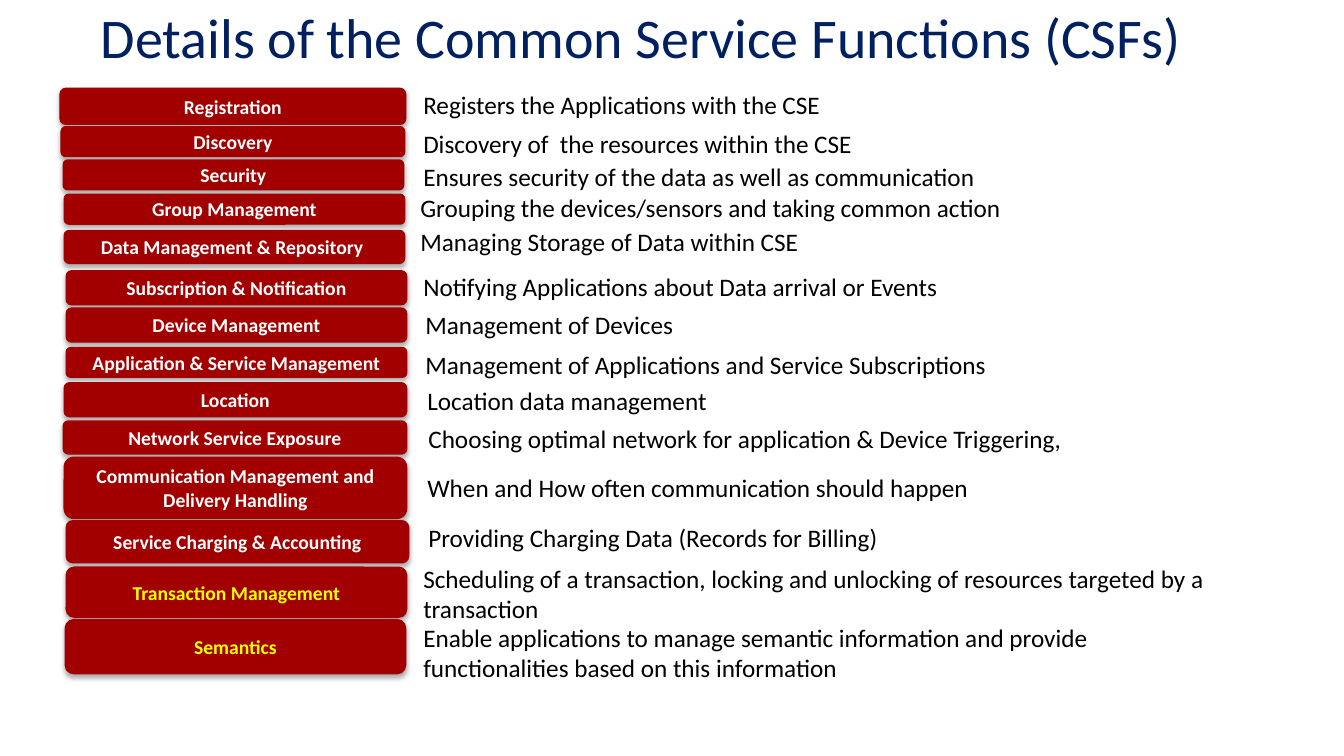
"""Build the slide that lists the Common Service Functions and their purpose."""
from dataclasses import dataclass

from lxml import etree
from pptx import Presentation
from pptx import util as u
from pptx.dml.color import RGBColor
from pptx.enum import shapes, text
from pptx.oxml.ns import qn

CELL = 0.1
FONT = "Calibri"
NAVY, RED, WHITE, YELLOW, BLACK = "002060", "A20000", "FFFFFF", "FFFF00", "000000"


@dataclass
class Function:
    name: str
    col: float
    row: float
    cols: float
    rows: float
    note: str
    note_col: float
    note_row: float
    note_cols: float
    note_rows: float = 4
    color: str = WHITE


FUNCTIONS = [
    Function("Registration", 5.9, 8.7, 34.4, 3.7,
             "Registers the Applications with the CSE", 41, 8.4, 79.7),
    Function("Discovery", 6, 12.5, 34.2, 3.1,
             "Discovery of  the resources within the CSE", 41, 12.2, 58.3),
    Function("Security", 6.2, 15.8, 33.9, 3.1,
             "Ensures security of the data as well as communication", 41, 15.5, 60.5),
    Function("Group Management", 6.3, 19.2, 33.9, 3.1,
             "Grouping the devices/sensors and taking common action", 40.7, 18.6, 70.5),
    Function("Data Management & Repository ", 6.3, 22.8, 33.9, 3.4,
             "Managing Storage of Data within CSE", 40.7, 22, 60.5),
    Function("Subscription & Notification", 6.5, 26.8, 33.9, 3.5,
             "Notifying Applications about Data arrival or Events", 41, 26.4, 60.5),
    Function("Device Management", 6.5, 30.5, 33.9, 3.5,
             "Management of Devices", 41.2, 30.2, 60.5),
    Function("Application & Service Management", 6.5, 34.4, 33.9, 3.1,
             "Management of Applications and Service Subscriptions", 41.2, 34.2, 69.9),
    Function("Location", 6.3, 37.9, 34.1, 3.5,
             "Location data management", 41.4, 37.7, 60.5),
    Function("Network Service Exposure", 6.2, 41.7, 34.2, 3.4,
             "Choosing optimal network for application & Device Triggering,",
             41.5, 41.5, 69.9),
    Function("Communication Management and Delivery Handling", 6.3, 45.3, 34.1, 6.2,
             "When and How often communication should happen", 41.4, 46.4, 60.5),
    Function("Service Charging & Accounting", 6.5, 51.6, 34.1, 4.3,
             "Providing Charging Data (Records for Billing)", 41.5, 51.3, 69.9),
    Function("Transaction Management", 6.5, 56.2, 33.9, 5.1,
             "Scheduling of a transaction, locking and unlocking of resources "
             "targeted by a transaction", 41, 55.4, 82.3, 7.1, YELLOW),
    Function("Semantics", 6.4, 61.4, 33.9, 5.5,
             "Enable applications to manage semantic information and provide "
             "functionalities based on this information", 41, 61.2, 80.7, 7.1, YELLOW),
]


def rgb(value: str) -> RGBColor:
    return RGBColor.from_string(value)


def grid(*cells: float) -> list[int]:
    return [u.Inches(c * CELL) for c in cells]


def write(tf, words: str, *, size: float, color: str, bold: bool = False,
          align=text.PP_ALIGN.LEFT, anchor=text.MSO_ANCHOR.TOP, spacing: float = 1.0) -> None:
    tf.word_wrap = True
    tf.vertical_anchor = anchor
    p = tf.paragraphs[0]
    p.alignment = align
    p.line_spacing = spacing
    r = p.add_run()
    r.text = words
    r.font.name, r.font.size, r.font.bold = FONT, u.Pt(size), bold
    r.font.color.rgb = rgb(color)


def add_shadow(sp) -> None:
    sp.shadow.inherit = False
    effects = sp._element.spPr.find(qn("a:effectLst"))
    shadow = etree.SubElement(effects, qn("a:outerShdw"), blurRad=str(u.Pt(3.5)),
                              dist=str(u.Pt(2.2)), dir="5400000", rotWithShape="0")
    color = etree.SubElement(shadow, qn("a:srgbClr"), val=BLACK)
    etree.SubElement(color, qn("a:alpha"), val="32000")


def add_label(s, f: Function) -> None:
    sp = s.shapes.add_shape(shapes.MSO_SHAPE.ROUNDED_RECTANGLE,
                            *grid(f.col, f.row, f.cols, f.rows))
    sp.fill.solid()
    sp.fill.fore_color.rgb = rgb(RED)
    sp.line.fill.background()
    add_shadow(sp)
    tf = sp.text_frame
    tf.margin_left = tf.margin_right = 0
    write(tf, f.name, size=14, color=f.color, bold=True,
          align=text.PP_ALIGN.CENTER, anchor=text.MSO_ANCHOR.MIDDLE)


def add_note(s, f: Function) -> None:
    sp = s.shapes.add_textbox(*grid(f.note_col, f.note_row, f.note_cols, f.note_rows))
    write(sp.text_frame, f.note, size=18, color=BLACK)
    sp.text_frame.auto_size = text.MSO_AUTO_SIZE.SHAPE_TO_FIT_TEXT


def main() -> None:
    prs = Presentation()
    prs.slide_width, prs.slide_height = u.Inches(13.33), u.Inches(7.5)
    s = prs.slides.add_slide(prs.slide_layouts[6])
    title = s.shapes.add_textbox(*grid(9, 1.2, 111.7, 6.3))
    write(title.text_frame, "Details of the Common Service Functions (CSFs)", size=40,
          color=NAVY, anchor=text.MSO_ANCHOR.BOTTOM, spacing=0.9)
    for f in FUNCTIONS:
        add_label(s, f)
        add_note(s, f)
    prs.save("out.pptx")


if __name__ == "__main__":
    main()
